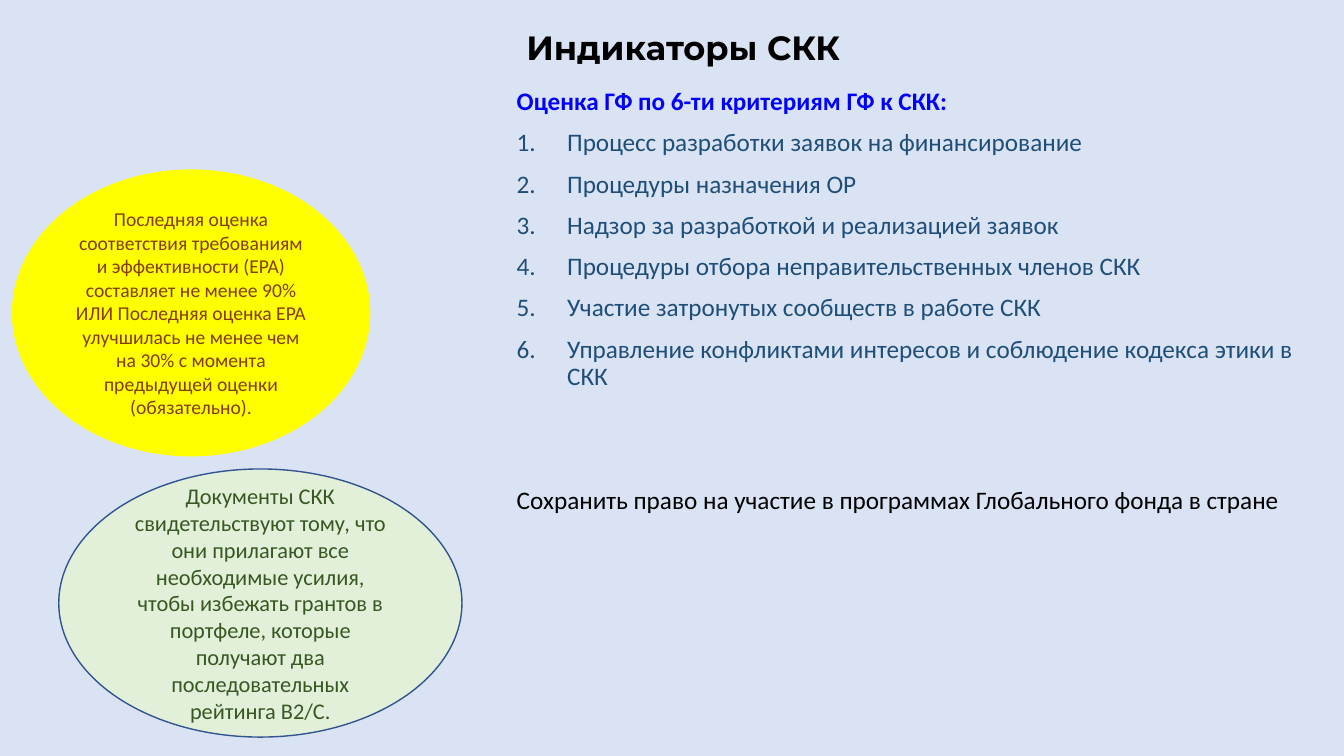
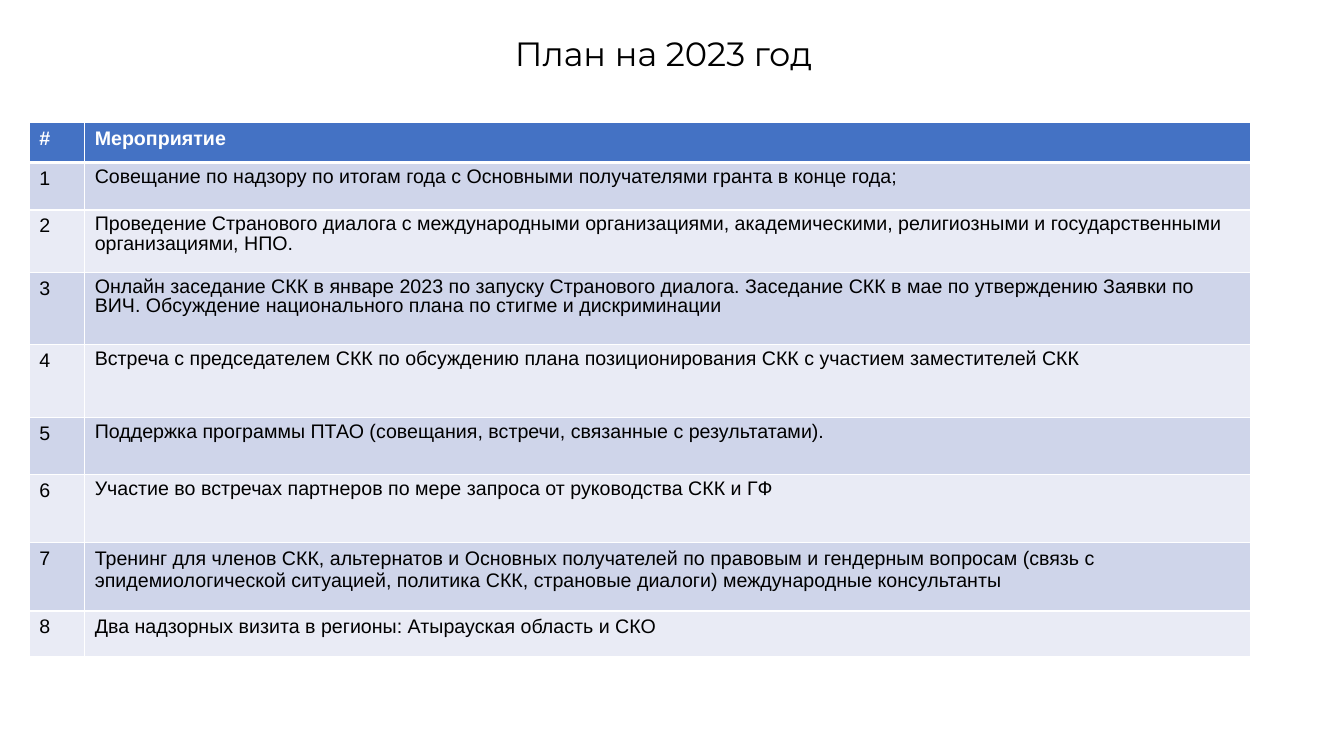
from dataclasses import dataclass

import lxml.etree
import pptx
import pptx.dml.color
import pptx.enum.shapes
import pptx.enum.text
import pptx.oxml.ns
import pptx.util

Pt = pptx.util.Pt
ALIGN = pptx.enum.text.PP_ALIGN
ANCHOR = pptx.enum.text.MSO_ANCHOR


@dataclass(frozen=True)
class Theme:
    title_font: str = "Montserrat"
    body_font: str = "Calibri"
    table_font: str = "Arial"
    title_size: float = 24
    body_size: float = 18
    large_note_size: float = 16
    small_size: float = 14
    line_spacing: float = 0.9
    paragraph_gap: float = 10
    black: str = "000000"
    white: str = "FFFFFF"
    pale_blue: str = "DAE3F3"
    heading_blue: str = "0000FF"
    list_blue: str = "1F4E79"
    yellow: str = "FFFF00"
    brown: str = "843C0B"
    pale_green: str = "E2F0D9"
    dark_green: str = "385723"
    outline_blue: str = "325491"
    header_blue: str = "4472C4"
    bands: tuple = ("CFD5EA", "E9EBF5")


THEME = Theme()

CRITERIA = [
    "Процесс разработки заявок на финансирование",
    "Процедуры назначения ОР",
    "Надзор за разработкой и реализацией заявок",
    "Процедуры отбора неправительственных членов СКК",
    "Участие затронутых сообществ в работе СКК",
    "Управление конфликтами интересов и соблюдение кодекса этики в СКК",
]
RATING_NOTE = (
    "Последняя оценка соответствия требованиям и эффективности (EPA) составляет не менее 90% "
    "ИЛИ Последняя оценка EPA улучшилась не менее чем на 30% с момента предыдущей оценки "
    "(обязательно)."
)
GRANT_NOTE = (
    "Документы СКК свидетельствуют тому, что они прилагают все необходимые усилия, чтобы "
    "избежать грантов в портфеле, которые получают два последовательных рейтинга B2/C."
)

# Row height, activity, line spacing
ACTIVITIES = [
    (34, "Совещание по надзору по итогам года с Основными получателями гранта в конце года;",
     THEME.line_spacing),
    (44.5, "Проведение Странового диалога с международными организациями, академическими, "
     "религиозными и государственными организациями, НПО.", THEME.line_spacing),
    (51.5, "Онлайн заседание СКК в январе 2023 по запуску Странового диалога. Заседание СКК в мае "
     "по утверждению Заявки по ВИЧ. Обсуждение национального плана по стигме и дискриминации",
     THEME.line_spacing),
    (52.5, "Встреча с председателем СКК по обсуждению плана позиционирования СКК с участием "
     "заместителей СКК", THEME.line_spacing),
    (40.5, "Поддержка программы ПТАО (совещания, встречи, связанные с результатами).",
     THEME.line_spacing),
    (48.5, "Участие во встречах партнеров по мере запроса от руководства СКК и ГФ",
     THEME.line_spacing),
    (49, "Тренинг для членов СКК, альтернатов и Основных получателей по правовым и гендерным "
     "вопросам (связь с эпидемиологической ситуацией, политика СКК, страновые диалоги) "
     "международные консультанты", 1),
    (32.5, "Два надзорных визита в регионы: Атырауская область и СКО", 1),
]
HEADER_HEIGHT = 28.5
COLUMN_WIDTHS = (39.5, 833)


def color(value):
    return pptx.dml.color.RGBColor.from_string(value)


def add_slide(presentation, background):
    slide = presentation.slides.add_slide(presentation.slide_layouts[6])
    slide.background.fill.solid()
    slide.background.fill.fore_color.rgb = color(background)
    return slide


def write_paragraph(paragraph, text, font, size, text_color, bold=False,
                    align=ALIGN.LEFT, spacing=1, before=0):
    paragraph.text = text
    paragraph.alignment = align
    paragraph.line_spacing = spacing
    paragraph.space_before = Pt(before)
    for run in paragraph.runs:
        run.font.name = font
        run.font.size = Pt(size)
        run.font.bold = bold
        run.font.color.rgb = color(text_color)


def add_text_frame(slide, left, top, width, height, anchor=ANCHOR.TOP):
    box = slide.shapes.add_textbox(Pt(left), Pt(top), Pt(width), Pt(height))
    box.text_frame.word_wrap = True
    box.text_frame.vertical_anchor = anchor
    return box.text_frame


def add_title(slide, text, left, top, height, bold=False):
    frame = add_text_frame(slide, left, top, 828, height, ANCHOR.MIDDLE)
    write_paragraph(frame.paragraphs[0], text, THEME.title_font, THEME.title_size, THEME.black,
                    bold, ALIGN.CENTER, THEME.line_spacing)


def number_paragraph(paragraph, indent=36):
    properties = paragraph._p.get_or_add_pPr()
    properties.set("marL", str(Pt(indent)))
    properties.set("indent", str(-Pt(indent)))
    numbering = lxml.etree.SubElement(properties, pptx.oxml.ns.qn("a:buAutoNum"))
    numbering.set("type", "arabicPeriod")


def add_criteria(slide):
    frame = add_text_frame(slide, 362, 60, 589, 466)
    # Text, colour, bold, numbered, space before
    lines = [("Оценка ГФ по 6-ти критериям ГФ к СКК:", THEME.heading_blue, True, False,
              THEME.paragraph_gap)]
    lines += [(text, THEME.list_blue, False, True, THEME.paragraph_gap) for text in CRITERIA]
    lines.append(("Сохранить право на участие в программах Глобального фонда в стране",
                  THEME.black, False, False, 69))
    for index, (text, text_color, bold, numbered, before) in enumerate(lines):
        paragraph = frame.add_paragraph() if index else frame.paragraphs[0]
        write_paragraph(paragraph, text, THEME.body_font, THEME.body_size, text_color, bold,
                        spacing=THEME.line_spacing, before=before)
        if numbered:
            number_paragraph(paragraph)


def add_ellipse_note(slide, text, left, top, width, height, fill, line, text_color, size):
    ellipse = slide.shapes.add_shape(pptx.enum.shapes.MSO_SHAPE.OVAL,
                                     Pt(left), Pt(top), Pt(width), Pt(height))
    ellipse.shadow.inherit = False
    ellipse.fill.solid()
    ellipse.fill.fore_color.rgb = color(fill)
    ellipse.line.color.rgb = color(line)
    ellipse.line.width = Pt(1)
    frame = ellipse.text_frame
    frame.word_wrap = True
    frame.vertical_anchor = ANCHOR.MIDDLE
    write_paragraph(frame.paragraphs[0], text, THEME.body_font, size, text_color,
                    align=ALIGN.CENTER)


def set_borders(cell, top, bottom):
    """Draw white borders; top and bottom are widths in points."""
    properties = cell._tc.get_or_add_tcPr()
    for edge, width in (("lnL", 1), ("lnR", 1), ("lnT", top), ("lnB", bottom)):
        line = lxml.etree.SubElement(properties, pptx.oxml.ns.qn("a:" + edge))
        line.set("w", str(Pt(width)))
        fill = lxml.etree.SubElement(line, pptx.oxml.ns.qn("a:solidFill"))
        lxml.etree.SubElement(fill, pptx.oxml.ns.qn("a:srgbClr")).set("val", THEME.white)


def add_activity_table(slide, left, top):
    rows = [(HEADER_HEIGHT, "#", "Мероприятие", 1)]
    rows += [(height, str(number), text, spacing)
             for number, (height, text, spacing) in enumerate(ACTIVITIES, 1)]
    table = slide.shapes.add_table(len(rows), len(COLUMN_WIDTHS), Pt(left), Pt(top),
                                   Pt(sum(COLUMN_WIDTHS)), Pt(sum(row[0] for row in rows))).table
    for column, width in zip(table.columns, COLUMN_WIDTHS):
        column.width = Pt(width)
    for index, (height, number, text, spacing) in enumerate(rows):
        header = index == 0
        table.rows[index].height = Pt(height)
        background = THEME.header_blue if header else THEME.bands[(index - 1) % 2]
        text_color = THEME.white if header else THEME.black
        for column, (content, line_spacing) in enumerate(((number, 1), (text, spacing))):
            cell = table.cell(index, column)
            set_borders(cell, top=3 if index == 1 else 1, bottom=3 if header else 1)
            cell.fill.solid()
            cell.fill.fore_color.rgb = color(background)
            write_paragraph(cell.text_frame.paragraphs[0], content, THEME.table_font,
                            THEME.small_size, text_color, header, spacing=line_spacing)


def build_indicators(presentation):
    slide = add_slide(presentation, THEME.pale_blue)
    add_title(slide, "Индикаторы СКК", 74, 20, 31, bold=True)
    add_criteria(slide)
    add_ellipse_note(slide, RATING_NOTE, 9, 121.5, 255, 204, THEME.yellow, THEME.yellow,
                     THEME.brown, THEME.small_size)
    add_ellipse_note(slide, GRANT_NOTE, 42, 335, 288, 191.5, THEME.pale_green,
                     THEME.outline_blue, THEME.dark_green, THEME.large_note_size)


def build_plan(presentation):
    slide = add_slide(presentation, THEME.white)
    add_activity_table(slide, 21, 87.5)
    add_title(slide, "План на 2023 год", 60, 26, 28)


def main():
    presentation = pptx.Presentation()
    presentation.slide_width = Pt(960)
    presentation.slide_height = Pt(540)
    build_indicators(presentation)
    build_plan(presentation)
    presentation.save("out.pptx")


if __name__ == "__main__":
    main()
